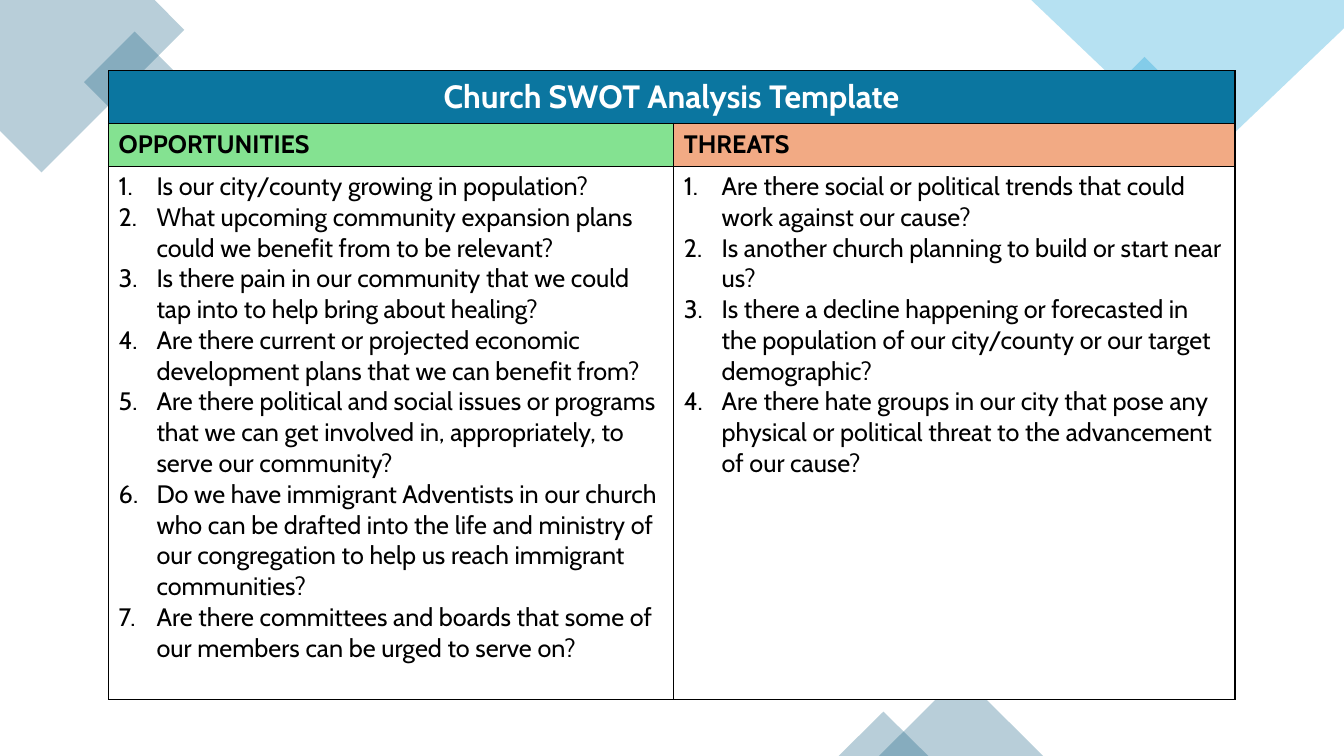
"""Builds the opportunities and threats slide of a church SWOT analysis."""
from lxml.etree import SubElement
from pptx import Presentation
from pptx.dml.color import RGBColor
from pptx.enum.shapes import MSO_SHAPE as SHAPE
from pptx.enum.text import MSO_ANCHOR as ANCHOR, PP_ALIGN as ALIGN
from pptx.oxml import parse_xml
from pptx.oxml.ns import nsdecls, qn
from pptx.util import Pt

TEAL = RGBColor(0x15, 0x60, 0x82)
SKY = RGBColor(0x0F, 0x9E, 0xD5)
BLUE = RGBColor(0x0B, 0x76, 0xA0)
GREEN = RGBColor(0x84, 0xE2, 0x91)
ORANGE = RGBColor(0xF2, 0xAA, 0x84)
WHITE = RGBColor(0xFF, 0xFF, 0xFF)
BLACK = RGBColor(0, 0, 0)
FONT = "Cabin"

TITLE = "Church SWOT Analysis Template"
COLUMNS = [
    ("OPPORTUNITIES", GREEN, 403.7, [
        "Is our city/county growing in population?",
        "What upcoming community expansion plans could we benefit from to be relevant?",
        "Is there pain in our community that we could tap into to help bring about healing?",
        "Are there current or projected economic development plans that we can benefit from?",
        "Are there political and social issues or programs that we can get involved in, "
        "appropriately, to serve our community?",
        "Do we have immigrant Adventists in our church who can be drafted into the life and "
        "ministry of our congregation to help us reach immigrant communities?",
        "Are there committees and boards that some of our members can be urged to serve on?",
    ]),
    ("THREATS", ORANGE, 400.8, [
        "Are there social or political trends that could work against our cause?",
        "Is another church planning to build or start near us?",
        "Is there a decline happening or forecasted in the population of our city/county "
        "or our target demographic?",
        "Are there hate groups in our city that pose any physical or political threat to "
        "the advancement of our cause?",
    ]),
]
TABLE_LEFT, TABLE_TOP = 77.6, 50.6
ROW_HEIGHTS = [37.4, 30.8, 380.8]
NUMBER_INDENT = 27

CORNERS = [
    (TEAL, [(110.4, 0), (0, 0), (0, 93.6), (29.6, 123.2), (131.6, 21.4)]),
    (SKY, [(960, 0), (736.6, 0), (859, 116.6), (960, 20.2)]),
]
DECORATIONS = [
    (SHAPE.RECTANGLE, TEAL, 315, (70.6, 33.1, 51.1, 51.1)),
    (SHAPE.RECTANGLE, SKY, 315, (790.6, 51.8, 54, 54)),
    (SHAPE.ISOSCELES_TRIANGLE, TEAL, 0, (627.8, 481.7, 117.4, 58.3)),
    (SHAPE.ISOSCELES_TRIANGLE, TEAL, 0, (599, 508.3, 64.1, 31.7)),
]


def tint(shape, color):
    """Fill a decoration with a 30 percent opaque colour."""
    shape.shadow.inherit = False
    shape.fill.solid()
    shape.fill.fore_color.rgb = color
    shape.line.fill.background()
    solid = shape._element.spPr.find(".//" + qn("a:srgbClr"))
    SubElement(solid, qn("a:alpha")).set("val", "30000")


def style_cell(cell, fill, size=18, color=BLACK, bold=False):
    """Give a cell its fill, black borders and type."""
    cell.fill.solid()
    cell.fill.fore_color.rgb = fill
    properties = cell._tc.get_or_add_tcPr()
    for index, side in enumerate("LRTB"):
        properties.insert(index, parse_xml(
            f'<a:ln{side} {nsdecls("a")} w="{Pt(1)}"><a:solidFill>'
            f'<a:srgbClr val="{BLACK}"/></a:solidFill></a:ln{side}>'))
    for paragraph in cell.text_frame.paragraphs:
        for run in paragraph.runs:
            run.font.name = FONT
            run.font.size = Pt(size)
            run.font.bold = bold
            run.font.color.rgb = color


def number(paragraph):
    """Turn a paragraph into an item of a numbered list."""
    properties = paragraph._p.get_or_add_pPr()
    properties.set("marL", str(Pt(NUMBER_INDENT)))
    properties.set("indent", str(Pt(-NUMBER_INDENT)))
    SubElement(properties, qn("a:buFont")).set("typeface", FONT)
    SubElement(properties, qn("a:buAutoNum")).set("type", "arabicPeriod")


def main():
    """Draw the decorations and the table, then save."""
    deck = Presentation()
    deck.slide_width, deck.slide_height = Pt(960), Pt(540)
    slide = deck.slides.add_slide(deck.slide_layouts[6])
    shapes = slide.shapes

    for color, points in CORNERS:
        outline = [(Pt(x), Pt(y)) for x, y in points]
        builder = shapes.build_freeform(*outline[0])
        builder.add_line_segments(outline[1:])
        tint(builder.convert_to_shape(), color)
    for kind, color, rotation, box in DECORATIONS:
        decoration = shapes.add_shape(kind, *map(Pt, box))
        decoration.rotation = rotation
        tint(decoration, color)

    widths = [width for _, _, width, _ in COLUMNS]
    swot = shapes.add_table(len(ROW_HEIGHTS), len(COLUMNS), Pt(TABLE_LEFT), Pt(TABLE_TOP),
                            Pt(sum(widths)), Pt(sum(ROW_HEIGHTS))).table
    swot.first_row = swot.horz_banding = False
    for row, height in zip(swot.rows, ROW_HEIGHTS):
        row.height = Pt(height)

    title = swot.cell(0, 0)
    title.merge(swot.cell(0, len(COLUMNS) - 1))
    title.text_frame.text = TITLE
    title.text_frame.paragraphs[0].alignment = ALIGN.CENTER
    title.vertical_anchor = ANCHOR.MIDDLE
    for cell in swot.rows[0].cells:
        style_cell(cell, BLUE, 23, WHITE, True)

    for index, (name, color, width, questions) in enumerate(COLUMNS):
        swot.columns[index].width = Pt(width)
        heading, body = swot.cell(1, index), swot.cell(2, index)
        heading.text_frame.text = name
        heading.vertical_anchor = ANCHOR.MIDDLE
        style_cell(heading, color, bold=True)
        body.text_frame.text = "\n".join(questions)
        for paragraph in body.text_frame.paragraphs:
            number(paragraph)
        style_cell(body, WHITE)

    deck.save("out.pptx")


if __name__ == "__main__":
    main()
